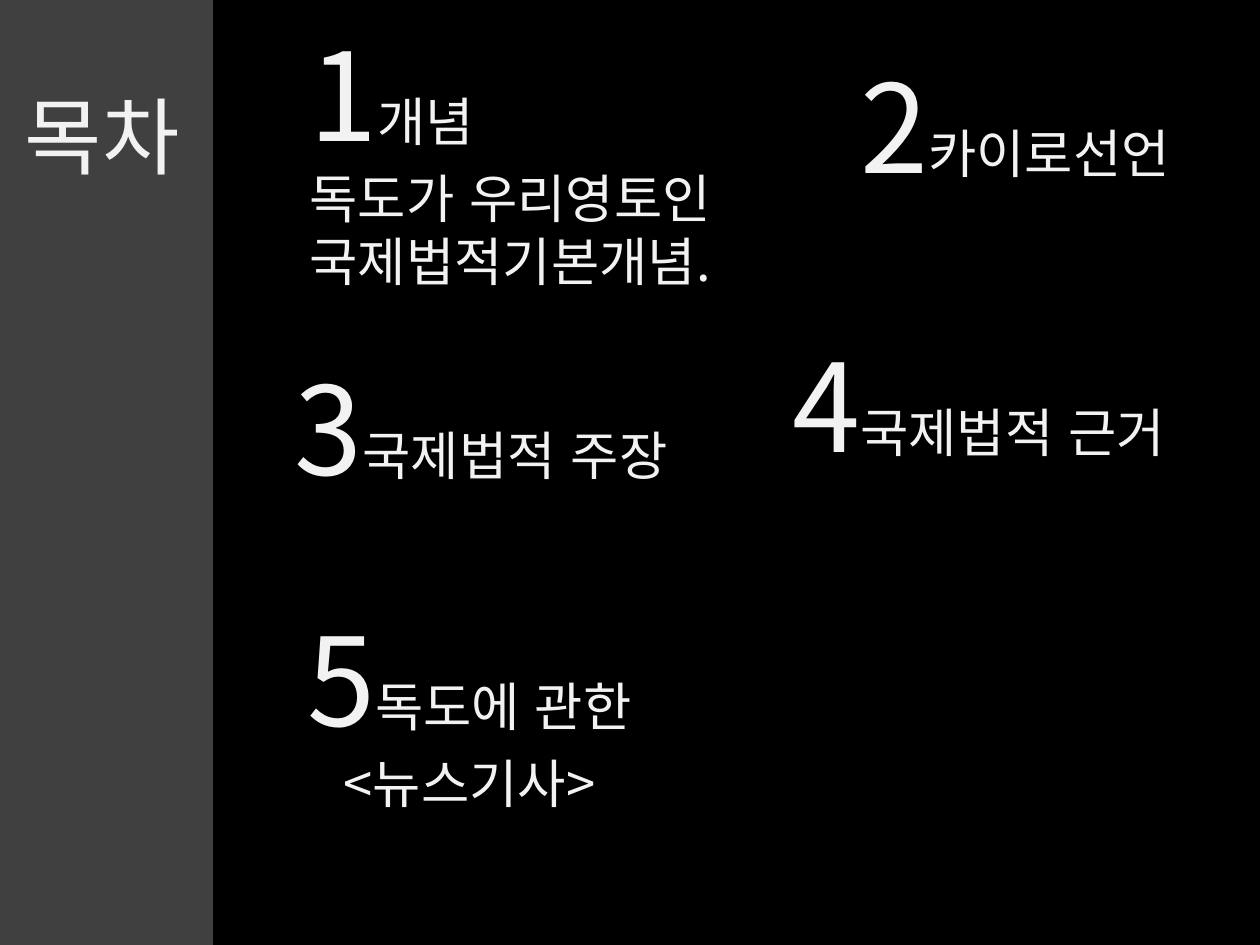
from pptx import Presentation
from pptx.dml.color import RGBColor
from pptx.enum.text import MSO_ANCHOR, MSO_AUTO_SIZE, PP_ALIGN
from pptx.oxml.ns import qn
from pptx.util import Cm, Pt

GROW, TOP = MSO_AUTO_SIZE.SHAPE_TO_FIT_TEXT, MSO_ANCHOR.TOP
LEFT, MID = PP_ALIGN.LEFT, PP_ALIGN.CENTER

THEME = {
    "font": "Noto Sans CJK KR",
    "back": RGBColor(0x00, 0x00, 0x00),
    "panel": RGBColor(0x40, 0x40, 0x40),
    "text": RGBColor(0xF2, 0xF2, 0xF2),
    "title": 48, "number": 70, "label": 30,
    "track": 5,  # letter spacing, hundredths of a point
}

# Content: box in cm (left, top, width, height), alignment, lines of (style, text)
PANEL = (0, 0, 4.3, 19.05)
TITLE = ((0.25, 1.57, 3.78, 2.29), LEFT, [[("title", "목차")]])
ITEMS = [
    ((5.99, 0.25, 9.78, 5.82), LEFT, "개념", ["독도가 우리영토인", "국제법적기본개념."]),
    ((17.09, 0.9, 7.42, 4.52), LEFT, "카이로선언", []),
    ((5.69, 7, 8.84, 4.27), LEFT, "국제법적 주장", []),
    ((15.72, 6.53, 8.84, 4.27), LEFT, "국제법적 근거", []),
    ((5.11, 12.05, 8.71, 5.56), MID, "독도에 관한", ["<뉴스기사>"]),
]


def add_box(slide, box):
    x, y, w, h = map(Cm, box)
    pen = slide.shapes.build_freeform(x, y)
    pen.add_line_segments([(x + w, y), (x + w, y + h), (x, y + h)])
    shape = pen.convert_to_shape()
    shape.shadow.inherit = False
    shape.fill.background()
    shape.line.fill.background()
    return shape


def add_run(para, style, text):
    run = para.add_run()
    run.text = text
    font = run.font
    font.size = Pt(THEME[style])
    font.name = THEME["font"]
    font.color.rgb = THEME["text"]
    props = run._r.get_or_add_rPr()
    props.set("lang", "ko-KR")
    props.set("spc", str(THEME["track"]))
    # Hangul takes the East Asian typeface
    east = props.makeelement(qn("a:ea"), {"typeface": THEME["font"]})
    props.find(qn("a:latin")).addnext(east)


def add_text(slide, box, align, lines):
    frame = add_box(slide, box).text_frame
    frame.word_wrap = False
    frame.auto_size = GROW
    frame.vertical_anchor = TOP
    for i, line in enumerate(lines):
        para = frame.add_paragraph() if i else frame.paragraphs[0]
        para.alignment = align
        for style, text in line:
            add_run(para, style, text)


def main():
    deck = Presentation()
    deck.slide_width, deck.slide_height = Cm(25.4), Cm(19.05)
    slide = deck.slides.add_slide(deck.slide_layouts[6])
    fill = slide.background.fill
    fill.solid()
    fill.fore_color.rgb = THEME["back"]

    # Side panel
    panel = add_box(slide, PANEL)
    panel.fill.solid()
    panel.fill.fore_color.rgb = THEME["panel"]

    # Title and numbered items
    add_text(slide, *TITLE)
    for num, (box, align, label, more) in enumerate(ITEMS, 1):
        head = [("number", str(num)), ("label", label)]
        add_text(slide, box, align, [head] + [[("label", t)] for t in more])

    deck.save("out.pptx")


if __name__ == "__main__":
    main()
